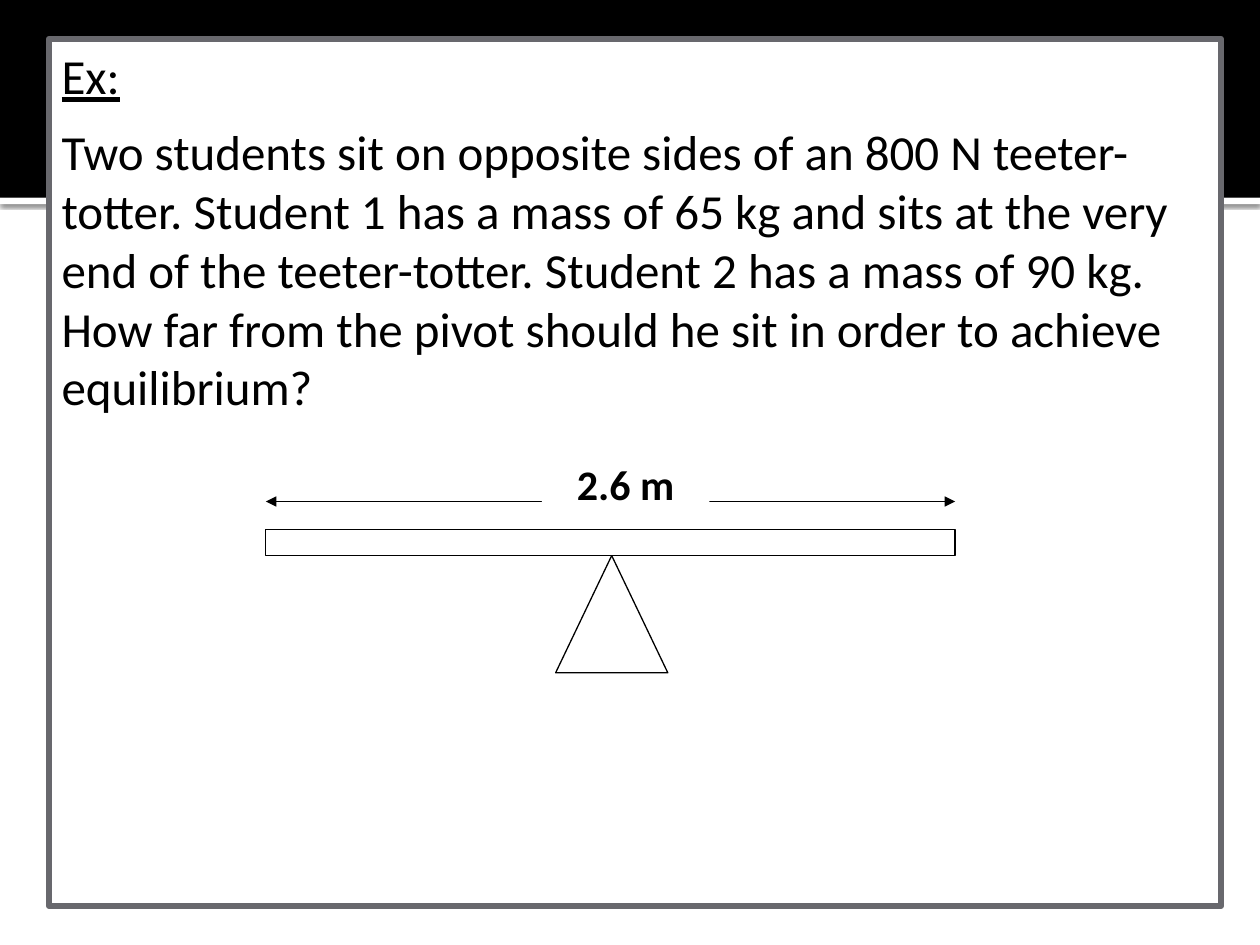
from dataclasses import dataclass

from lxml import etree
from pptx import Presentation
from pptx import util as u
from pptx.dml.color import RGBColor
from pptx.enum import shapes, text
from pptx.oxml.ns import qn

WIDTH, HEIGHT = 10, 7.5
BLACK, WHITE, GREY = "000000", "FFFFFF", "68686D"
BAND = 1.57 / HEIGHT  # share of the height taken by the black band
RECT = shapes.MSO_SHAPE.RECTANGLE
TRIANGLE = shapes.MSO_SHAPE.ISOSCELES_TRIANGLE


@dataclass
class Area:
    """A region given as shares of the slide's size."""
    left: float
    top: float
    width: float
    height: float


@dataclass
class Part:
    area: Area
    kind: int = RECT
    fill: str = WHITE
    line: str = ""
    weight: float = 0.75


def colour(value: str) -> RGBColor:
    return RGBColor.from_string(value)


def inches(left: float, top: float, width: float, height: float) -> Area:
    return Area(left / WIDTH, top / HEIGHT, width / WIDTH, height / HEIGHT)


def draw_part(page, part: Part):
    area = part.area
    shape = page.shapes.add_shape(
        part.kind,
        u.Inches(area.left * WIDTH), u.Inches(area.top * HEIGHT),
        u.Inches(area.width * WIDTH), u.Inches(area.height * HEIGHT))
    shape.shadow.inherit = False
    shape.fill.solid()
    shape.fill.fore_color.rgb = colour(part.fill)
    if part.line:
        shape.line.color.rgb = colour(part.line)
        shape.line.width = u.Pt(part.weight)
    else:
        shape.line.fill.background()
    return shape


def add_shadow(shape) -> None:
    effects = shape._element.spPr.find(qn("a:effectLst"))
    shadow = etree.SubElement(
        effects, qn("a:outerShdw"), blurRad=str(u.Pt(2.5)),
        dist=str(u.Pt(0.8)), dir="5400000", algn="t", rotWithShape="0")
    tint = etree.SubElement(shadow, qn("a:srgbClr"), val=BLACK)
    etree.SubElement(tint, qn("a:alpha"), val="60000")


def write(shape, lines: list[str], size: float, align, anchor) -> None:
    frame = shape.text_frame
    frame.word_wrap = True
    frame.vertical_anchor = anchor
    frame.text = "\n".join(lines)
    for para in frame.paragraphs:
        para.alignment = align
        para.space_after = u.Pt(10)
        for span in para.runs:
            span.font.name = "Calibri"
            span.font.size = u.Pt(size)
            span.font.color.rgb = colour(BLACK)


def draw_span_arrow(page, left: float, right: float, top: float) -> None:
    arrow = page.shapes.add_connector(
        shapes.MSO_CONNECTOR.STRAIGHT,
        u.Inches(left * WIDTH), u.Inches(top * HEIGHT),
        u.Inches(right * WIDTH), u.Inches(top * HEIGHT))
    arrow.line.color.rgb = colour(BLACK)
    arrow.line.width = u.Pt(0.75)
    line = arrow.line._get_or_add_ln()
    for end in ("a:headEnd", "a:tailEnd"):
        etree.SubElement(line, qn(end), type="triangle")
    etree.SubElement(arrow._element.spPr, qn("a:effectLst"))


def main() -> None:
    deck = Presentation()
    deck.slide_width, deck.slide_height = u.Inches(WIDTH), u.Inches(HEIGHT)
    page = deck.slides.add_slide(deck.slide_layouts[6])

    # Background band with its shaded edge
    edge = draw_part(page, Part(Area(0, BAND, 1, 0.05 / HEIGHT)))
    add_shadow(edge)
    draw_part(page, Part(Area(0, 0, 1, BAND), fill=BLACK))

    # Framed problem text
    frame = draw_part(page, Part(inches(0.39, 0.31, 9.3, 6.88),
                                 line=GREY, weight=3.78))
    etree.SubElement(frame.line._get_or_add_ln(), qn("a:round"))
    write(frame, [
        "Ex:",
        "Two students sit on opposite sides of an 800 N teeter-totter. "
        "Student 1 has a mass of 65 kg and sits at the very end of the "
        "teeter-totter. Student 2 has a mass of 90 kg.  How far from the "
        "pivot should he sit in order to achieve equilibrium?",
    ], 28, text.PP_ALIGN.LEFT, text.MSO_ANCHOR.TOP)
    frame.text_frame.paragraphs[0].runs[0].font.underline = True

    # Teeter-totter: pivot and plank
    plank = inches(2.11, 4.2, 5.47, 0.21)
    pivot = inches(4.41, 4.41, 0.89, 0.93)
    draw_part(page, Part(pivot, TRIANGLE, line=BLACK))
    draw_part(page, Part(plank, line=BLACK))

    # Length of the plank, with the label covering the arrow's middle
    draw_span_arrow(page, plank.left, plank.left + plank.width, 3.98 / HEIGHT)
    label = draw_part(page, Part(inches(4.3, 3.59, 1.33, 0.5)))
    write(label, ["2.6 m"], 24, text.PP_ALIGN.CENTER, text.MSO_ANCHOR.TOP)
    label.text_frame.paragraphs[0].runs[0].font.bold = True

    deck.save("out.pptx")


if __name__ == "__main__":
    main()
